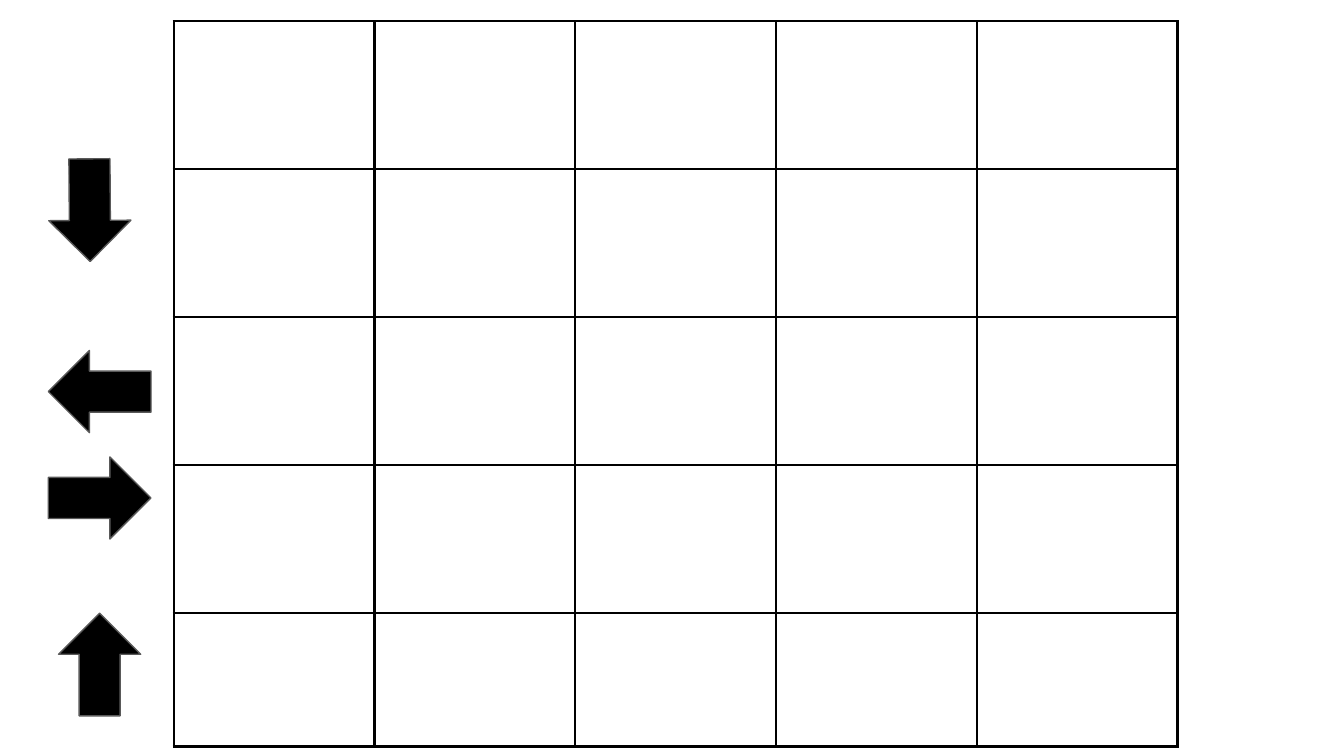
from lxml import etree
from pptx import Presentation
from pptx.dml.color import RGBColor
from pptx.enum import shapes
from pptx.oxml import ns
from pptx.util import Pt

COLORS = {"black": "000000", "outline": "595959", "white": "FFFFFF"}

COLUMN_WIDTHS = [107.55] * 5
ROW_HEIGHTS = [79.3] * 4 + [71.3]
GRID_LEFT, GRID_TOP = 93.1, 11.4
BORDER_WIDTH = 1.5

ARROW_WIDTH, ARROW_HEIGHT = 55, 44
# Left, top and rotation of each direction arrow
ARROWS = [
    (25.9, 334, 270),    # up
    (25.9, 244.8, 0),    # right
    (25.9, 187.8, 180),  # left
    (20.6, 90.6, 89.6),  # down
]


def color(name):
    return RGBColor.from_string(COLORS[name])


def set_borders(cell):
    """Draw a solid line on all four sides of a cell."""
    properties = cell._tc.get_or_add_tcPr()
    for index, side in enumerate(("lnL", "lnR", "lnT", "lnB")):
        line = etree.Element(ns.qn(f"a:{side}"), w=str(Pt(BORDER_WIDTH)))
        fill = etree.SubElement(line, ns.qn("a:solidFill"))
        etree.SubElement(fill, ns.qn("a:srgbClr"), val=COLORS["black"])
        # Borders come before the fill in the cell properties
        properties.insert(index, line)


def add_grid(slide):
    table = slide.shapes.add_table(
        len(ROW_HEIGHTS), len(COLUMN_WIDTHS), Pt(GRID_LEFT), Pt(GRID_TOP),
        Pt(sum(COLUMN_WIDTHS)), Pt(sum(ROW_HEIGHTS))).table
    table.first_row = table.horz_banding = False
    for column, width in zip(table.columns, COLUMN_WIDTHS):
        column.width = Pt(width)
    for row, height in zip(table.rows, ROW_HEIGHTS):
        row.height = Pt(height)
    for cell in table.iter_cells():
        cell.fill.background()
        set_borders(cell)


def add_arrow(slide, left, top, rotation):
    arrow = slide.shapes.add_shape(
        shapes.MSO_SHAPE.RIGHT_ARROW, Pt(left), Pt(top),
        Pt(ARROW_WIDTH), Pt(ARROW_HEIGHT))
    arrow.rotation = rotation
    arrow.shadow.inherit = False
    arrow.fill.solid()
    arrow.fill.fore_color.rgb = color("black")
    arrow.line.color.rgb = color("outline")
    arrow.line.width = Pt(0.75)


def main():
    presentation = Presentation()
    presentation.slide_width, presentation.slide_height = Pt(720), Pt(405)
    slide = presentation.slides.add_slide(presentation.slide_layouts[6])
    slide.background.fill.solid()
    slide.background.fill.fore_color.rgb = color("white")

    # Empty grid
    add_grid(slide)

    # Direction arrows beside the grid
    for left, top, rotation in ARROWS:
        add_arrow(slide, left, top, rotation)

    presentation.save("out.pptx")


if __name__ == "__main__":
    main()
